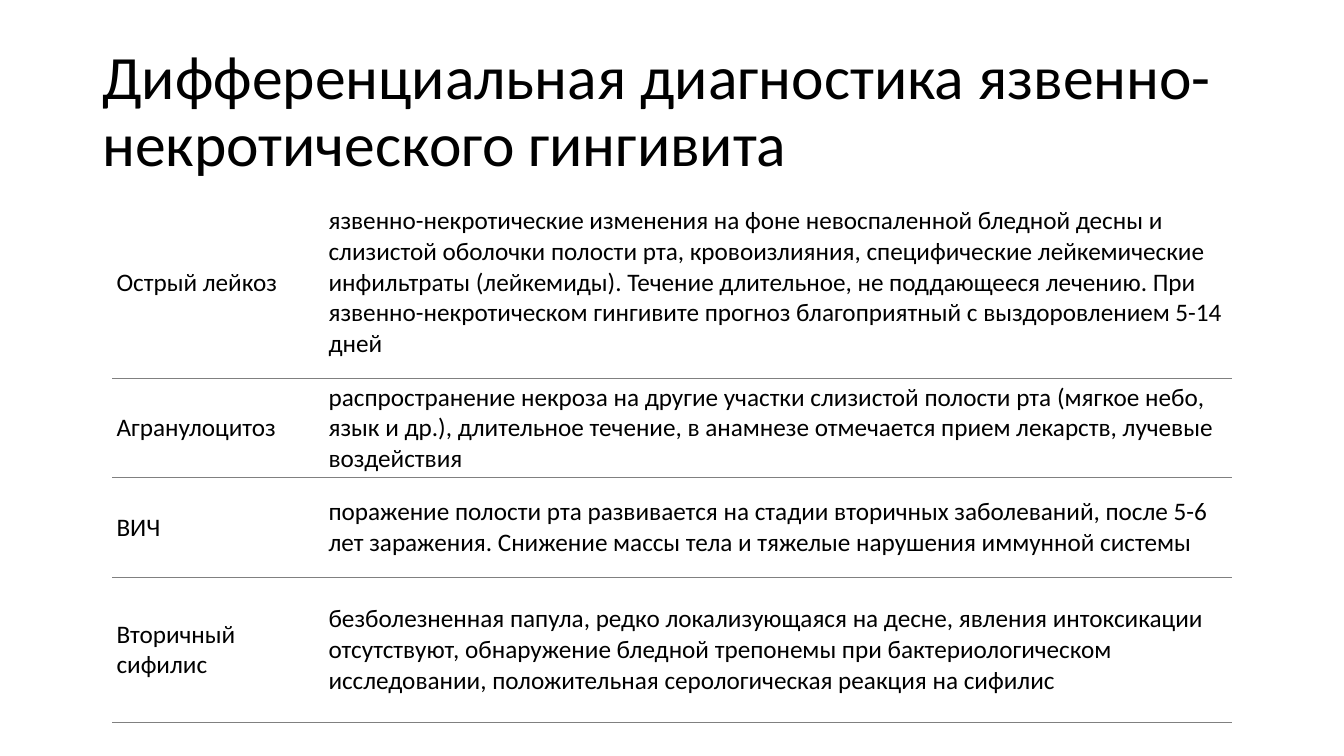
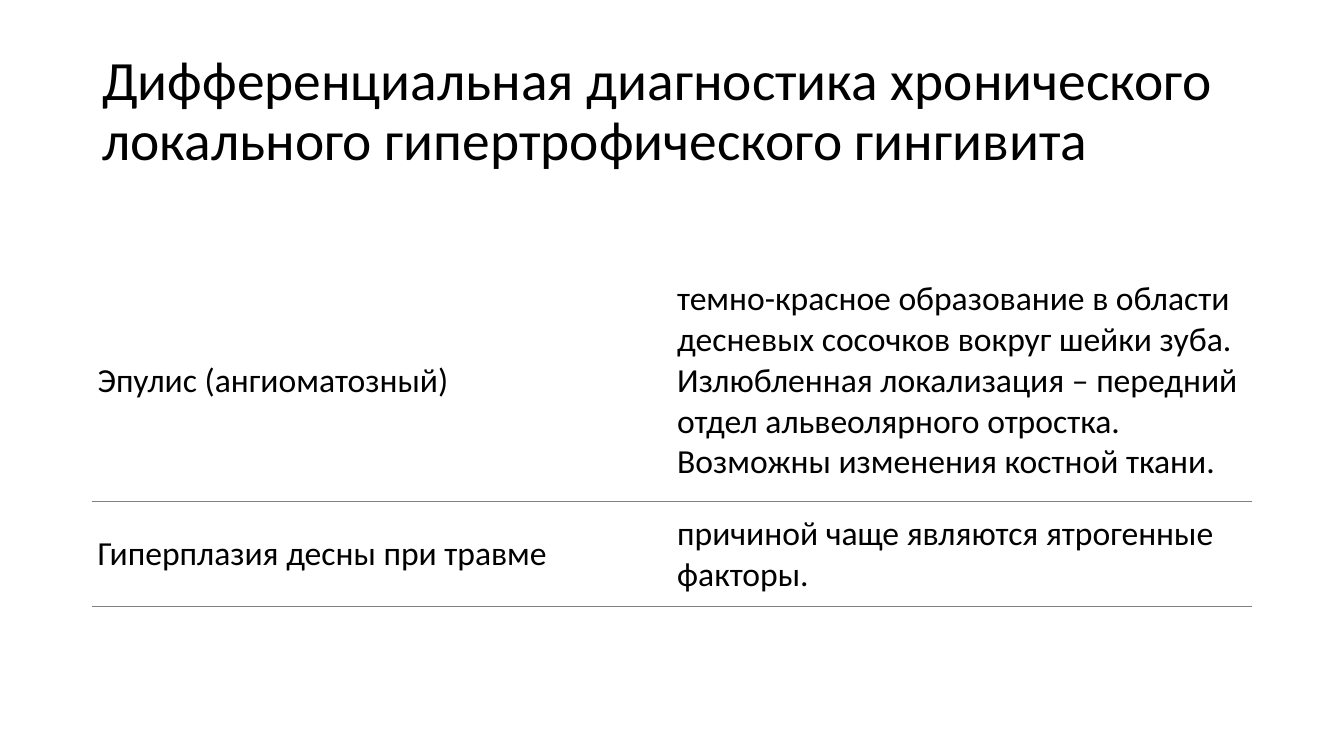
from lxml.etree import SubElement
from pptx import Presentation
from pptx.dml.color import RGBColor
from pptx.enum.text import MSO_ANCHOR
from pptx.oxml.ns import qn
from pptx.util import Pt

EMU_PER_PX = 9525
SLIDE_WIDTH, SLIDE_HEIGHT = 1280, 720
FONT = "Calibri"
TEXT_COLOR, CELL_COLOR, RULE_COLOR = "000000", "FFFFFF", "808080"
RULE_WIDTH = Pt(0.75)
TITLE_BOX = (88, 38, 1104, 139)

ULCERATIVE_ROWS = [
    ("Острый лейкоз",
     "язвенно-некротические изменения на фоне невоспаленной бледной десны и "
     "слизистой оболочки полости рта, кровоизлияния, специфические лейкемические "
     "инфильтраты (лейкемиды). Течение длительное, не поддающееся лечению. При "
     "язвенно-некротическом гингивите прогноз благоприятный с выздоровлением 5-14 дней"),
    ("Агранулоцитоз",
     "распространение некроза на другие участки слизистой полости рта (мягкое небо, "
     "язык и др.), длительное течение, в анамнезе отмечается прием лекарств, лучевые "
     "воздействия"),
    ("ВИЧ",
     "поражение полости рта развивается на стадии вторичных заболеваний, после 5-6 "
     "лет заражения. Снижение массы тела и тяжелые нарушения иммунной системы"),
    ("Вторичный сифилис",
     "безболезненная папула, редко локализующаяся на десне, явления интоксикации "
     "отсутствуют, обнаружение бледной трепонемы при бактериологическом "
     "исследовании, положительная серологическая реакция на сифилис"),
]
HYPERTROPHIC_ROWS = [
    ("Эпулис (ангиоматозный)",
     "темно-красное образование в области десневых сосочков вокруг шейки зуба. "
     "Излюбленная локализация – передний отдел альвеолярного отростка. "
     "Возможны изменения костной ткани."),
    ("Гиперплазия десны при травме",
     "причиной чаще являются ятрогенные факторы."),
]


def px(length):
    return length * EMU_PER_PX


def rgb(color):
    return RGBColor.from_string(color)


def write(frame, text, *, size, color=TEXT_COLOR, line_spacing=None):
    frame.word_wrap = True
    paragraph = frame.paragraphs[0]
    paragraph.line_spacing = line_spacing
    run = paragraph.add_run()
    run.text = text
    run.font.name = FONT
    run.font.size = Pt(size)
    run.font.color.rgb = rgb(color)


def add_title(slide, text, size):
    frame = slide.shapes.add_textbox(*map(px, TITLE_BOX)).text_frame
    frame.vertical_anchor = MSO_ANCHOR.MIDDLE
    write(frame, text, size=size, line_spacing=0.9)


def set_borders(cell, ruled_sides):
    """Rule the given sides (letters of LRTB) and clear the others; call before filling."""
    properties = cell._tc.get_or_add_tcPr()
    for side in "LRTB":
        line = SubElement(properties, qn(f"a:ln{side}"))
        if side in ruled_sides:
            line.set("w", str(RULE_WIDTH))
            fill = SubElement(line, qn("a:solidFill"))
            SubElement(fill, qn("a:srgbClr")).set("val", RULE_COLOR)
        else:
            SubElement(line, qn("a:noFill"))


def add_diagnosis_table(slide, left, top, widths, heights, rows, *, size, inset):
    table = slide.shapes.add_table(
        len(rows), len(widths), px(left), px(top), px(sum(widths)), px(sum(heights))
    ).table
    table.first_row = table.horz_banding = False
    for column, width in zip(table.columns, widths):
        column.width = px(width)
    for row_index, (height, texts) in enumerate(zip(heights, rows)):
        table.rows[row_index].height = px(height)
        for column_index, text in enumerate(texts):
            cell = table.cell(row_index, column_index)
            set_borders(cell, "TB" if row_index else "B")
            cell.fill.solid()
            cell.fill.fore_color.rgb = rgb(CELL_COLOR)
            cell.vertical_anchor = MSO_ANCHOR.MIDDLE
            cell.margin_left = cell.margin_right = px(inset)
            cell.margin_top = cell.margin_bottom = px(inset)
            write(cell.text_frame, text, size=size)


def main():
    presentation = Presentation()
    presentation.slide_width = px(SLIDE_WIDTH)
    presentation.slide_height = px(SLIDE_HEIGHT)
    blank = presentation.slide_layouts[6]

    ulcerative = presentation.slides.add_slide(blank)
    add_title(ulcerative, "Дифференциальная диагностика язвенно-некротического гингивита", 44)
    add_diagnosis_table(ulcerative, 107, 178, (202, 864), (182, 95, 95, 138),
                        ULCERATIVE_ROWS, size=18, inset=4)

    hypertrophic = presentation.slides.add_slide(blank)
    add_title(hypertrophic, "Дифференциальная диагностика хронического "
              "локального гипертрофического гингивита", 39.6)
    add_diagnosis_table(hypertrophic, 88, 247, (552, 552), (231, 100),
                        HYPERTROPHIC_ROWS, size=24, inset=5)

    presentation.save("out.pptx")


if __name__ == "__main__":
    main()
